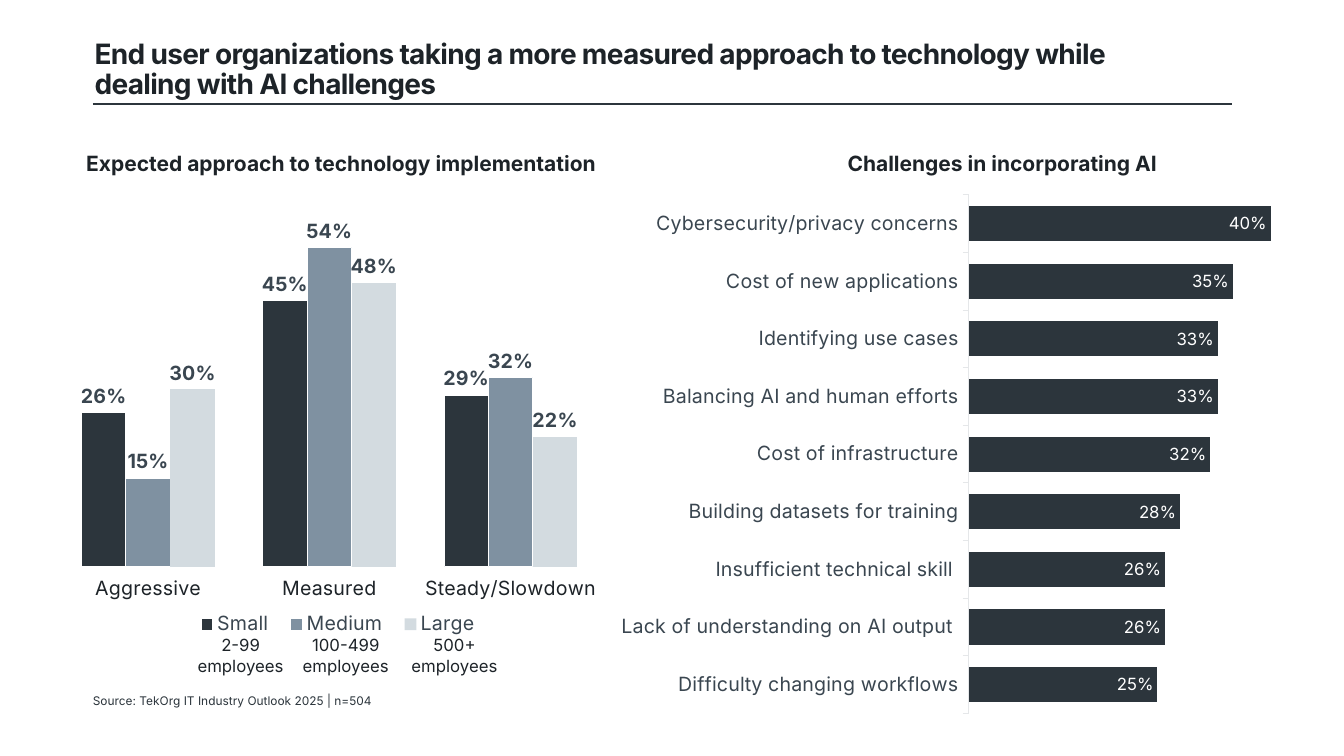
from lxml import etree
from pptx import Presentation
from pptx import util as u
from pptx.chart.data import CategoryChartData
from pptx.dml.color import RGBColor
from pptx.enum import chart as ch
from pptx.enum import shapes, text
from pptx.oxml import parse_xml
from pptx.oxml.ns import nsdecls, qn

INK, NAVY, SLATE, STEEL, MIST = "1D2328", "2C353C", "3A4650", "7F91A1", "D3DBE0"


def style(font, size, color, bold=False):
    font.name = "Inter"
    font.size = u.Pt(size)
    font.bold = bold
    font.color.rgb = RGBColor.from_string(color)


def set_layout(parent, position, x, y, width, height, inner=False):
    """Place a chart part by fractions of the chart's size."""
    for old in parent.findall(qn("c:layout")):
        parent.remove(old)
    target = '<c:layoutTarget val="inner"/>' if inner else ""
    parent.insert(position, parse_xml(
        f'<c:layout {nsdecls("c")}><c:manualLayout>{target}'
        '<c:xMode val="edge"/><c:yMode val="edge"/>'
        f'<c:x val="{x}"/><c:y val="{y}"/><c:w val="{width}"/><c:h val="{height}"/>'
        '</c:manualLayout></c:layout>'))


presentation = Presentation()
presentation.slide_width = u.Cm(33.87)
presentation.slide_height = u.Cm(19.05)
slide = presentation.slides.add_slide(presentation.slide_layouts[5])

# Title and rule
title = slide.shapes.title
title.left, title.top, title.width, title.height = u.Cm(2.13), u.Cm(0.89), u.Cm(28.4), u.Cm(1.78)
title.text_frame.text = ("End user organizations taking a more measured approach to technology "
                         "while dealing with AI challenges")
title.text_frame.auto_size = text.MSO_AUTO_SIZE.NONE
title.text_frame.vertical_anchor = text.MSO_ANCHOR.MIDDLE
paragraph = title.text_frame.paragraphs[0]
paragraph.alignment = text.PP_ALIGN.LEFT
paragraph.line_spacing = 0.9
style(paragraph.runs[0].font, 20, INK, True)
paragraph.runs[0].font._element.set("spc", "-50")

rule = slide.shapes.add_connector(shapes.MSO_CONNECTOR.STRAIGHT,
                                  u.Cm(2.34), u.Cm(2.62), u.Cm(31.06), u.Cm(2.62))
rule.line.color.rgb = RGBColor.from_string(NAVY)
rule.line.width = u.Pt(1)
etree.SubElement(rule._element.spPr, qn("a:effectLst"))

# Charts
approach = {
    "kind": ch.XL_CHART_TYPE.COLUMN_CLUSTERED,
    "box": (1.45, 5.13, 13.72, 11.46),
    "plot": (0, 0.005, 0.999, 0.794),
    "categories": ["Aggressive", "Measured", "Steady/Slowdown"],
    "series": [("Small", (0.26, 0.45, 0.29), NAVY),
               ("Medium", (0.15, 0.54, 0.32), STEEL),
               ("Large", (0.30, 0.48, 0.22), MIST)],
    "gap": 108, "overlap": 0, "maximum": 0.61, "axis_color": INK,
    "label": (14, SLATE, True), "label_position": ch.XL_LABEL_POSITION.OUTSIDE_END,
}
challenges = {
    "kind": ch.XL_CHART_TYPE.BAR_CLUSTERED,
    "box": (13.97, 4.57, 19.53, 13.56),
    "plot": (0.535, 0.025, 0.409, 0.964),
    "categories": ["Difficulty changing workflows", "Lack of understanding on AI output ",
                   "Insufficient technical skill ", "Building datasets for training",
                   "Cost of infrastructure", "Balancing AI and human efforts",
                   "Identifying use cases", "Cost of new applications",
                   "Cybersecurity/privacy concerns"],
    "series": [("Series 1", (0.25, 0.26, 0.26, 0.28, 0.32, 0.33, 0.33, 0.35, 0.40), NAVY)],
    "gap": 64, "overlap": -7, "maximum": 0.42, "axis_color": SLATE,
    "label": (12, "FFFFFF", False), "label_position": ch.XL_LABEL_POSITION.INSIDE_END,
}
for config in (approach, challenges):
    data = CategoryChartData(number_format="0%")
    data.categories = config["categories"]
    for name, values, _ in config["series"]:
        data.add_series(name, values)
    box = [u.Cm(length) for length in config["box"]]
    chart = slide.shapes.add_chart(config["kind"], *box, data).chart
    chart.has_title = False
    chart.has_legend = config is approach
    chart.font.name = "Roboto"
    set_layout(chart._chartSpace.chart.plotArea, 0, *config["plot"], inner=True)

    chart.value_axis.minimum_scale = 0
    chart.value_axis.maximum_scale = config["maximum"]
    chart.value_axis.has_major_gridlines = False
    chart.value_axis.visible = False
    category_axis = chart.category_axis
    category_axis.major_tick_mark = ch.XL_TICK_MARK.OUTSIDE
    style(category_axis.tick_labels.font, 14, config["axis_color"])
    axis_line = category_axis.format.line

    plot = chart.plots[0]
    plot.vary_by_categories = False
    plot.gap_width = config["gap"]
    plot.overlap = config["overlap"]
    for series, (_, _, color) in zip(plot.series, config["series"]):
        series.format.fill.solid()
        series.format.fill.fore_color.rgb = RGBColor.from_string(color)
        labels = series.data_labels
        labels.show_value = True
        labels.number_format = "0%"
        labels.number_format_is_linked = False
        labels.position = config["label_position"]
        style(labels.font, *config["label"])
        if color != MIST and config is approach:
            series.format.line.color.rgb = RGBColor.from_string("FFFFFF")
            series.format.line.width = u.Pt(0.75)

    if chart.has_legend:
        axis_line.fill.background()
        chart.legend.position = ch.XL_LEGEND_POSITION.BOTTOM
        chart.legend.include_in_layout = False
        style(chart.legend.font, 14, SLATE)
        set_layout(chart.legend._element, 1, 0.235, 0.895, 0.56, 0.06)
    else:
        axis_line.color.rgb = RGBColor.from_string("E5E7E9")
        axis_line.width = u.Pt(0.75)

# Headings, company sizes under the legend, and source
center, left = text.PP_ALIGN.CENTER, text.PP_ALIGN.LEFT
notes = [
    ("Expected approach to technology implementation", (1.6, 3.66, 14, 0.89), 15, INK, True, center),
    ("Challenges in incorporating AI", (18.26, 3.66, 14, 0.89), 15, INK, True, center),
    ("2-99 employees", (4.67, 15.88, 2.79, 1.27), 12, INK, False, center),
    ("100-499 employees", (7.32, 15.88, 2.79, 1.27), 12, INK, False, center),
    ("500+ employees", (10.06, 15.88, 2.79, 1.27), 12, INK, False, center),
    ("Source: TekOrg IT Industry Outlook 2025 | n=504", (2.34, 17.4, 17.78, 0.51), 8.5, NAVY, False, left),
]
for wording, box, size, color, bold, alignment in notes:
    frame = slide.shapes.add_textbox(*[u.Cm(length) for length in box]).text_frame
    frame.word_wrap = True
    frame.text = wording
    frame.paragraphs[0].alignment = alignment
    style(frame.paragraphs[0].runs[0].font, size, color, bold)
    if alignment == left:
        frame.margin_left = frame.margin_right = frame.margin_top = frame.margin_bottom = 0
        frame.vertical_anchor = text.MSO_ANCHOR.MIDDLE

presentation.save("out.pptx")
